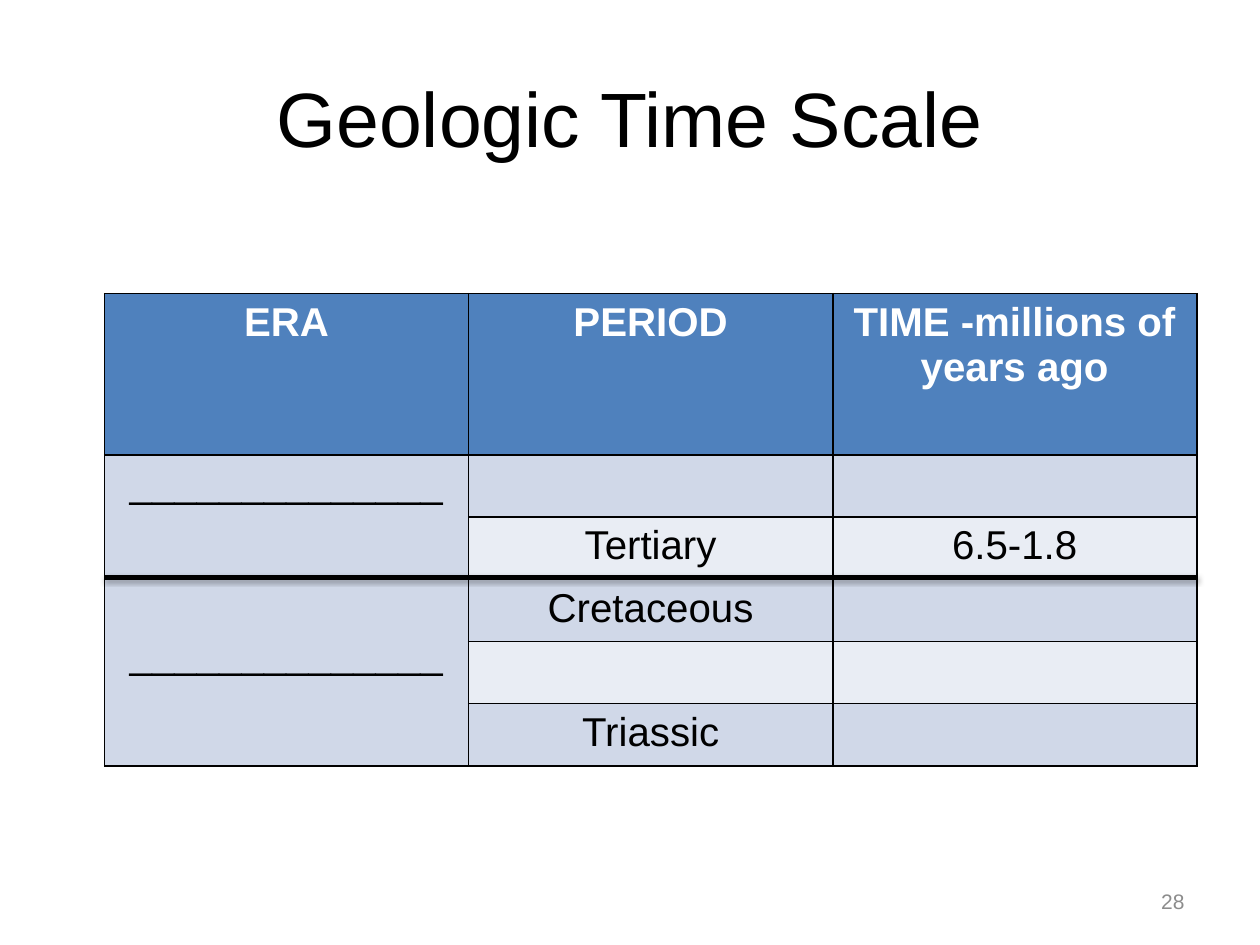
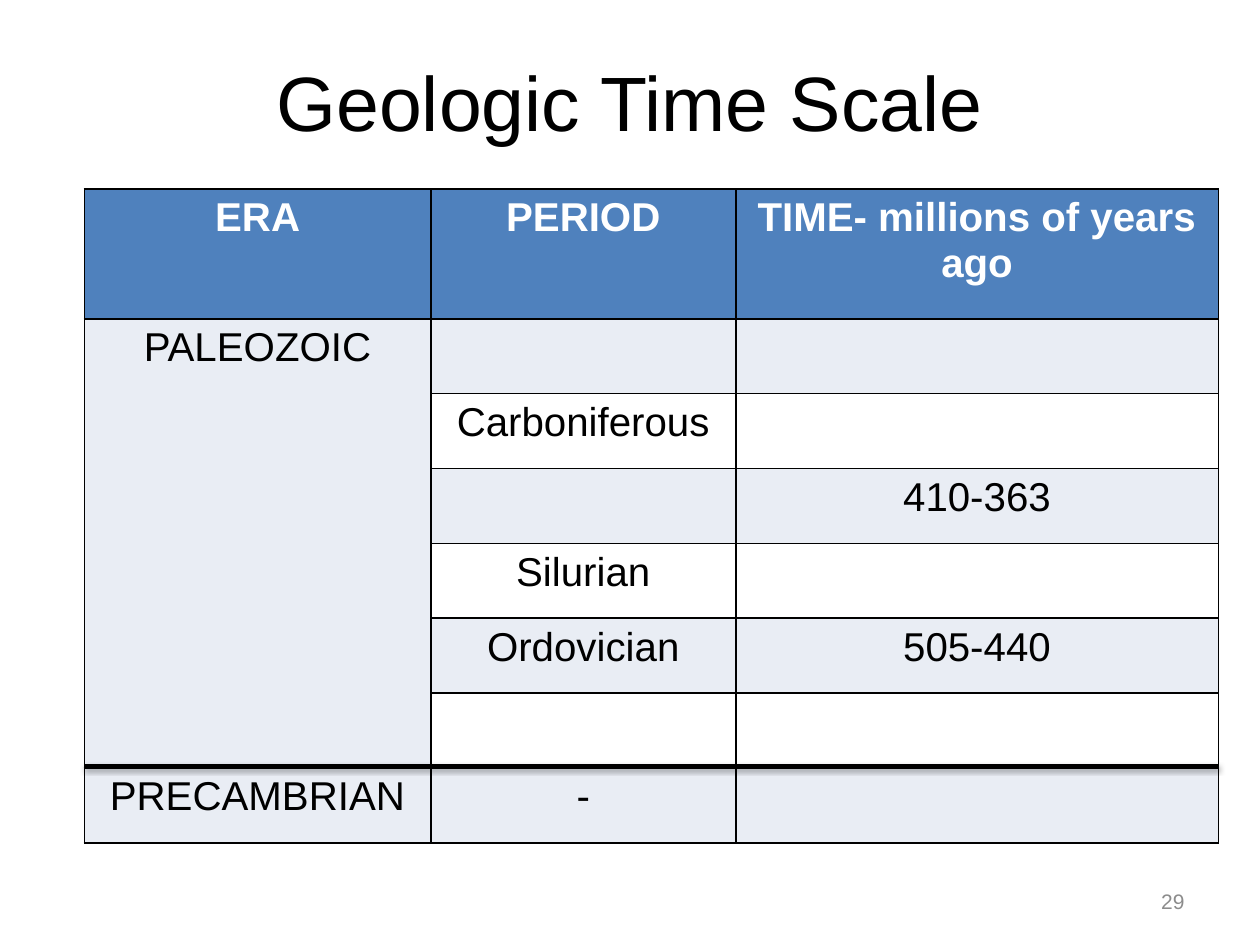
from dataclasses import dataclass

from lxml.etree import SubElement
from pptx import Presentation
from pptx.dml.color import RGBColor
from pptx.enum.shapes import MSO_CONNECTOR
from pptx.enum.text import MSO_ANCHOR, PP_ALIGN
from pptx.oxml.ns import qn
from pptx.slide import Slide
from pptx.table import _Cell
from pptx.text.text import _Paragraph
from pptx.util import Inches, Pt


@dataclass(frozen=True)
class Theme:
    font: str = "Arial"
    ink: str = "000000"
    paper: str = "FFFFFF"
    header: str = "4F81BD"
    band_dark: str = "D0D8E8"
    band_light: str = "E9EDF4"
    number: str = "8C8C8C"
    title_size: int = 44
    cell_size: int = 23
    number_size: int = 12


THEME = Theme()
BLANK_ERA = "_" * 14


@dataclass(frozen=True)
class Era:
    name: str
    periods: list[tuple[str, str]]
    lines_down: int = 0


@dataclass(frozen=True)
class TimePage:
    number: str
    title_top: float
    left: float
    top: float
    columns: list[float]
    header_height: float
    body_height: float
    rule_y: float
    time_heading: str
    bands: tuple[str, str]
    eras: list[Era]


PAGES = [
    TimePage(
        "28", 0.3, 0.83, 2.33, [2.89] * 3, 1.28, 2.47, 4.58,
        "TIME -millions of years ago",
        (THEME.band_dark, THEME.band_light),
        [
            Era(BLANK_ERA, [("", ""), ("Tertiary", "6.5-1.8")]),
            Era(BLANK_ERA, [("Cretaceous", ""), ("", ""), ("Triassic", "")], lines_down=1),
        ],
    ),
    TimePage(
        "29", 0.17, 0.67, 1.5, [2.75, 2.42, 3.83], 1.03, 4.16, 6.08,
        "TIME- millions of years ago",
        (THEME.band_light, THEME.paper),
        [
            Era("PALEOZOIC", [("", ""), ("Carboniferous", ""), ("", "410-363"),
                              ("Silurian", ""), ("Ordovician", "505-440"), ("", "")]),
            Era("PRECAMBRIAN", [("-", "")]),
        ],
    ),
]


def write(para: _Paragraph, text: str, align: PP_ALIGN, size: int, color: str,
          bold: bool = False) -> None:
    para.alignment = align
    span = para.add_run() if text else para
    if text:
        span.text = text
    formats = {"name": THEME.font, "size": Pt(size), "bold": bold}
    for name, value in formats.items():
        setattr(span.font, name, value)
    span.font.color.rgb = RGBColor.from_string(color)


def add_text(page: Slide, left: float, top: float, width: float, height: float,
             text: str, align: PP_ALIGN, size: int, color: str) -> None:
    box = page.shapes.add_textbox(Inches(left), Inches(top), Inches(width), Inches(height))
    formats = {"word_wrap": True, "vertical_anchor": MSO_ANCHOR.MIDDLE}
    for name, value in formats.items():
        setattr(box.text_frame, name, value)
    write(box.text_frame.paragraphs[0], text, align, size, color)


def fill_cell(cell: _Cell, text: str, fill: str, color: str = THEME.ink,
              bold: bool = False) -> None:
    # Borders come before the fill in the cell properties
    properties = cell._tc.get_or_add_tcPr()
    for side in ("lnL", "lnR", "lnT", "lnB"):
        border = SubElement(properties, qn(f"a:{side}"), w=str(Pt(1)))
        SubElement(SubElement(border, qn("a:solidFill")), qn("a:srgbClr"), val=THEME.ink)
    cell.fill.solid()
    cell.fill.fore_color.rgb = RGBColor.from_string(fill)
    write(cell.text_frame.paragraphs[0], text, PP_ALIGN.CENTER, THEME.cell_size, color, bold)


def add_time_table(page: Slide, spec: TimePage) -> None:
    body_rows = sum(len(era.periods) for era in spec.eras)
    table = page.shapes.add_table(
        body_rows + 1, len(spec.columns), Inches(spec.left), Inches(spec.top),
        Inches(sum(spec.columns)), Inches(spec.header_height + spec.body_height)).table
    for column, width in zip(table.columns, spec.columns):
        column.width = Inches(width)
    heights = [spec.header_height] + [spec.body_height / body_rows] * body_rows
    for row, height in zip(table.rows, heights):
        row.height = Inches(height)

    # Header row
    for column, heading in enumerate(("ERA", "PERIOD", spec.time_heading)):
        fill_cell(table.cell(0, column), heading, THEME.header, THEME.paper, bold=True)

    # One merged era cell beside its periods
    row = 1
    for era in spec.eras:
        first = row
        for period, time in era.periods:
            name = era.name if row == first else ""
            for column, text in enumerate((name, period, time)):
                fill_cell(table.cell(row, column), text, spec.bands[(row - 1) % 2])
            row += 1
        era_cell = table.cell(first, 0)
        era_cell.margin_top = Inches(0.05 + 0.37 * era.lines_down)
        if row - first > 1:
            era_cell.merge(table.cell(row - 1, 0))


def add_era_rule(page: Slide, spec: TimePage) -> None:
    y = Inches(spec.rule_y)
    rule = page.shapes.add_connector(
        MSO_CONNECTOR.STRAIGHT, Inches(spec.left), y,
        Inches(spec.left + sum(spec.columns)), y)
    rule.line.width = Pt(2)
    rule.line.color.rgb = RGBColor.from_string(THEME.ink)
    effects = SubElement(rule._element.spPr, qn("a:effectLst"))
    shadow = SubElement(effects, qn("a:outerShdw"), blurRad=str(Pt(3.1)),
                        dist=str(Pt(1.6)), dir=str(90 * 60000), rotWithShape="0")
    tint = SubElement(shadow, qn("a:srgbClr"), val=THEME.ink)
    SubElement(tint, qn("a:alpha"), val="38000")


def main() -> None:
    deck = Presentation()
    deck.slide_width, deck.slide_height = Inches(10), Inches(7.5)
    for spec in PAGES:
        page = deck.slides.add_slide(deck.slide_layouts[6])
        add_text(page, 0.5, spec.title_top, 9, 1.25, "Geologic Time Scale",
                 PP_ALIGN.CENTER, THEME.title_size, THEME.ink)
        add_time_table(page, spec)
        add_era_rule(page, spec)
        add_text(page, 7.17, 6.95, 2.33, 0.4, spec.number,
                 PP_ALIGN.RIGHT, THEME.number_size, THEME.number)
    deck.save("out.pptx")


if __name__ == "__main__":
    main()
